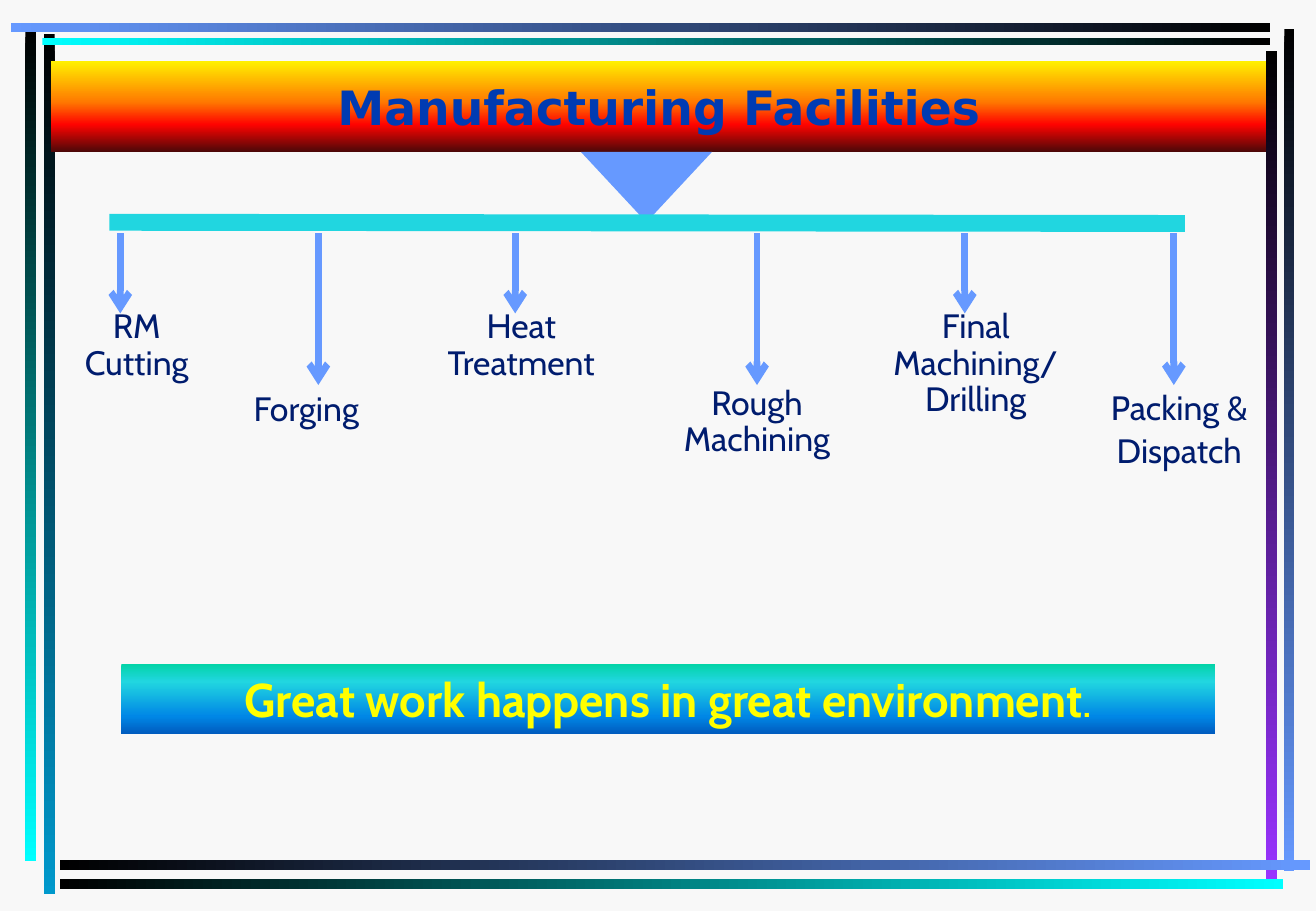
"""Draw the manufacturing facilities slide: six steps hung from one bar."""
from dataclasses import dataclass

from lxml.etree import SubElement as Sub
from pptx import Presentation
from pptx.dml.color import RGBColor as Rgb
from pptx.enum.shapes import MSO_CONNECTOR as Link, MSO_SHAPE as Kind
from pptx.enum.text import MSO_ANCHOR as Anchor, PP_ALIGN as Align
from pptx.oxml.ns import qn
from pptx.util import Inches, Pt

HUE = {
    "page": "F8F8F8", "black": "000000", "sky": "6699FF", "aqua": "00FFFF",
    "sea": "0099CC", "plum": "9933FF", "bar": "21D6E0", "head": "003BB2",
    "navy": "001C6E", "lemon": "FFFF00", "gold": "FFF200", "flame": "FF7A00",
    "red": "FF0300", "wine": "4D0808", "mint": "03D4A8", "azure": "0087E6",
    "deep": "005CBF",
}
ACROSS, DOWN = 0, 270
TOP, SHORT, LONG = 1.92, 2.58, 3.17

Box = tuple[float, float, float, float]
Stops = list[tuple[int, str]]


@dataclass
class Strip:
    box: Box
    start: str
    end: str
    turn: int


@dataclass
class Step:
    x: float
    tip: float
    box: Box
    lines: list[str]
    align: Align = Align.CENTER


@dataclass
class Font:
    face: str
    size: int
    hue: str
    bold: bool = False


STRIPS = [
    Strip((0.36, 0.28, 0.09, 7.08), "black", "sea", DOWN),
    Strip((0.21, 0.25, 0.09, 6.84), "black", "aqua", DOWN),
    Strip((10.57, 0.24, 0.08, 6.93), "black", "sky", DOWN),
    Strip((10.42, 0.42, 0.09, 6.83), "black", "plum", DOWN),
    Strip((0.49, 7.08, 10.29, 0.08), "black", "sky", ACROSS),
    Strip((0.49, 7.24, 10.07, 0.08), "black", "aqua", ACROSS),
    Strip((0.35, 0.31, 10.1, 0.06), "aqua", "black", ACROSS),
    Strip((0.09, 0.19, 10.36, 0.07), "sky", "black", ACROSS),
]
STEPS = [
    Step(0.99, SHORT, (0.54, 2.5, 1.17, 0.71), ["RM Cutting"]),
    Step(2.62, LONG, (1.99, 3.18, 1.26, 0.4), ["Forging"], Align.LEFT),
    Step(4.24, SHORT, (3.43, 2.5, 1.72, 0.71), ["Heat Treatment"]),
    Step(6.23, LONG, (5.42, 3.13, 1.62, 0.71), ["Rough Machining"]),
    Step(7.94, SHORT, (7.22, 2.5, 1.62, 1.01), ["Final Machining/ Drilling"]),
    Step(9.66, LONG, (9.03, 3.17, 1.35, 1.08), ["Packing &", "Dispatch"]),
]
TITLE = Font("DejaVu Sans", 28, "head", True)
LABEL = Font("Cabin", 20, "navy")
MOTTO = Font("Cabin", 28, "lemon", True)
POINT = Font("Cabin", 28, "lemon")


def tint(name: str) -> Rgb:
    return Rgb.from_string(HUE[name])


def place(box: Box) -> list[int]:
    return [Inches(n) for n in box]


def add_form(slide, kind: Kind, box: Box):
    form = slide.shapes.add_shape(kind, *place(box))
    form.shadow.inherit = False
    form.line.fill.background()
    return form


def add_fade(slide, box: Box, stops: Stops, turn: int):
    form = add_form(slide, Kind.RECTANGLE, box)
    form.fill.gradient()
    form.fill.gradient_angle = turn
    ramp = form._element.spPr.find(qn("a:gradFill")).find(qn("a:gsLst"))
    for old in list(ramp):
        ramp.remove(old)
    for spot, name in stops:
        stop = Sub(ramp, qn("a:gs"), pos=str(spot * 1000))
        Sub(stop, qn("a:srgbClr"), val=HUE[name])
    return form


def add_run(para, text: str, font: Font) -> None:
    run = para.add_run()
    run.text = text
    run.font.name = font.face
    run.font.size = Pt(font.size)
    run.font.bold = font.bold
    run.font.color.rgb = tint(font.hue)


def add_band(slide, box: Box, stops: Stops, runs: list[tuple[str, Font]]) -> None:
    frame = add_fade(slide, box, stops, DOWN).text_frame
    frame.word_wrap = True
    frame.vertical_anchor = Anchor.MIDDLE
    para = frame.paragraphs[0]
    para.alignment = Align.CENTER
    for text, font in runs:
        add_run(para, text, font)


def add_line(slide, start: tuple[float, float], end: tuple[float, float],
             name: str, width: float):
    line = slide.shapes.add_connector(Link.STRAIGHT, *place(start + end))
    line.line.color.rgb = tint(name)
    line.line.width = Pt(width)
    Sub(line._element.spPr, qn("a:effectLst"))
    return line


def add_step(slide, step: Step) -> None:
    arrow = add_line(slide, (step.x, TOP), (step.x, step.tip), "sky", 4)
    Sub(arrow.line._get_or_add_ln(), qn("a:tailEnd"), type="arrow")
    frame = slide.shapes.add_textbox(*place(step.box)).text_frame
    frame.word_wrap = True
    for i, text in enumerate(step.lines):
        para = frame.add_paragraph() if i else frame.paragraphs[0]
        para.alignment = step.align
        para.line_spacing = 0.9
        if i:
            para.space_before = Pt(4)
        add_run(para, text, LABEL)


def main() -> None:
    deck = Presentation()
    deck.slide_width, deck.slide_height = Inches(10.83), Inches(7.5)
    slide = deck.slides.add_slide(deck.slide_layouts[6])
    slide.background.fill.solid()
    slide.background.fill.fore_color.rgb = tint("page")
    for strip in STRIPS:
        add_fade(slide, strip.box, [(0, strip.start), (100, strip.end)], strip.turn)
    add_band(slide, (0.42, 0.5, 10, 0.75),
             [(0, "gold"), (45, "flame"), (70, "red"), (100, "wine")],
             [("Manufacturing Facilities", TITLE)])
    wedge = add_form(slide, Kind.FLOWCHART_MERGE, (4.78, 1.25, 1.08, 0.58))
    wedge.fill.solid()
    wedge.fill.fore_color.rgb = tint("sky")
    add_line(slide, (0.9, 1.83), (9.75, 1.84), "bar", 10)
    for step in STEPS:
        add_step(slide, step)
    add_band(slide, (1, 5.47, 9, 0.57),
             [(0, "mint"), (25, "bar"), (75, "azure"), (100, "deep")],
             [("Great work happens in great environment", MOTTO), (".", POINT)])
    deck.save("out.pptx")


if __name__ == "__main__":
    main()
